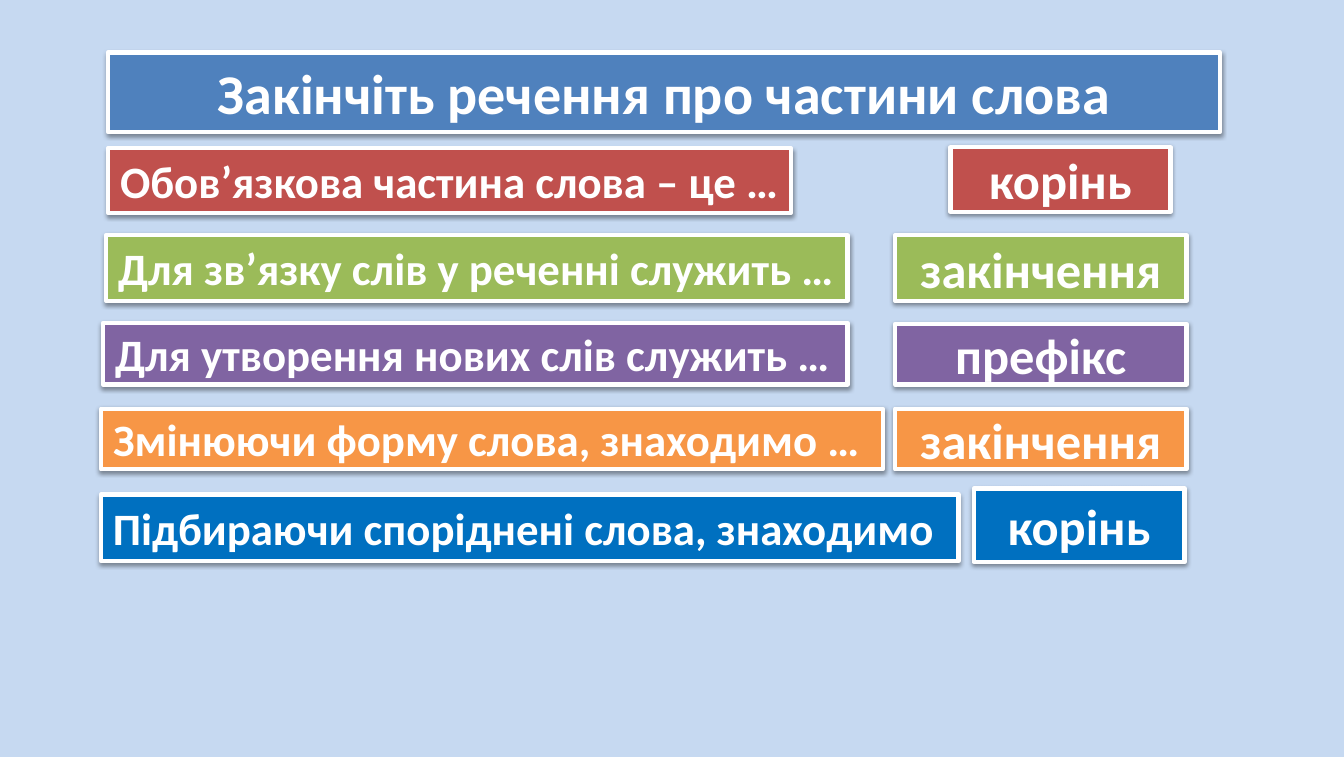
import lxml.etree
import pptx
import pptx.dml.color
import pptx.enum.shapes
import pptx.enum.text
import pptx.oxml.ns
import pptx.util

EMU_PER_PX = 9144
FONT = "Calibri"
COLORS = {
    "background": "C6D9F1",
    "title": "4F81BD",
    "red": "C0504D",
    "green": "9BBB59",
    "purple": "8064A2",
    "orange": "F79646",
    "blue": "0070C0",
    "white": "FFFFFF",
    "shadow": "000000",
}
TITLE = "Закінчіть речення про частини слова"
TITLE_BOX = (107, 52, 1102, 79)
ROWS = [
    ("red", "Обов’язкова частина слова – це …", (107, 147, 677, 64),
     "корінь", (942, 146, 218, 64)),
    ("green", "Для зв’язку слів у реченні служить …", (105, 233, 735, 65),
     "закінчення", (887, 233, 289, 65)),
    ("purple", "Для утворення нових слів служить …", (102, 320, 738, 61),
     "префікс", (887, 321, 289, 60)),
    ("orange", "Змінюючи форму слова, знаходимо …", (100, 405, 775, 60),
     "закінчення", (887, 405, 289, 60)),
    ("blue", "Підбираючи споріднені слова, знаходимо", (100, 490, 850, 66),
     "корінь", (965, 484, 209, 73)),
]


def px(length):
    return pptx.util.Emu(length * EMU_PER_PX)


def color(name):
    return pptx.dml.color.RGBColor.from_string(COLORS[name])


def add_shadow(shape):
    shape.shadow.inherit = False
    qn = pptx.oxml.ns.qn
    effects = shape._element.spPr.find(qn("a:effectLst"))
    shadow = lxml.etree.SubElement(
        effects, qn("a:outerShdw"), blurRad="40000", dist="20000",
        dir="5400000", rotWithShape="0")
    tint = lxml.etree.SubElement(shadow, qn("a:srgbClr"), val=COLORS["shadow"])
    lxml.etree.SubElement(tint, qn("a:alpha"), val="38000")


def add_card(slide, box, text, fill, size, centered=True):
    shape = slide.shapes.add_shape(
        pptx.enum.shapes.MSO_SHAPE.RECTANGLE, *map(px, box))
    shape.fill.solid()
    shape.fill.fore_color.rgb = color(fill)
    shape.line.color.rgb = color("white")
    shape.line.width = pptx.util.Pt(3)
    add_shadow(shape)

    frame = shape.text_frame
    frame.text = text
    frame.word_wrap = True
    frame.vertical_anchor = pptx.enum.text.MSO_ANCHOR.MIDDLE
    frame.margin_left = px(12)
    frame.margin_right = px(12 if centered else 6)
    frame.margin_top = frame.margin_bottom = px(6)
    paragraph = frame.paragraphs[0]
    alignments = pptx.enum.text.PP_ALIGN
    paragraph.alignment = alignments.CENTER if centered else alignments.LEFT
    font = paragraph.runs[0].font
    font.name = FONT
    font.size = pptx.util.Pt(size)
    font.bold = True
    font.color.rgb = color("white")
    return shape


def fit_to_text(shape):
    frame = shape.text_frame
    frame.vertical_anchor = pptx.enum.text.MSO_ANCHOR.TOP
    frame.auto_size = pptx.enum.text.MSO_AUTO_SIZE.SHAPE_TO_FIT_TEXT


def main():
    presentation = pptx.Presentation()
    presentation.slide_width = px(1332)
    presentation.slide_height = px(750)
    slide = presentation.slides.add_slide(presentation.slide_layouts[6])
    slide.background.fill.solid()
    slide.background.fill.fore_color.rgb = color("background")

    add_card(slide, TITLE_BOX, TITLE, "title", 40)
    for fill, sentence, sentence_box, answer, answer_box in ROWS:
        cards = [
            add_card(slide, sentence_box, sentence, fill, 32, centered=False),
            add_card(slide, answer_box, answer, fill, 36),
        ]
        if fill == "blue":
            for card in cards:
                fit_to_text(card)

    presentation.save("out.pptx")


if __name__ == "__main__":
    main()
